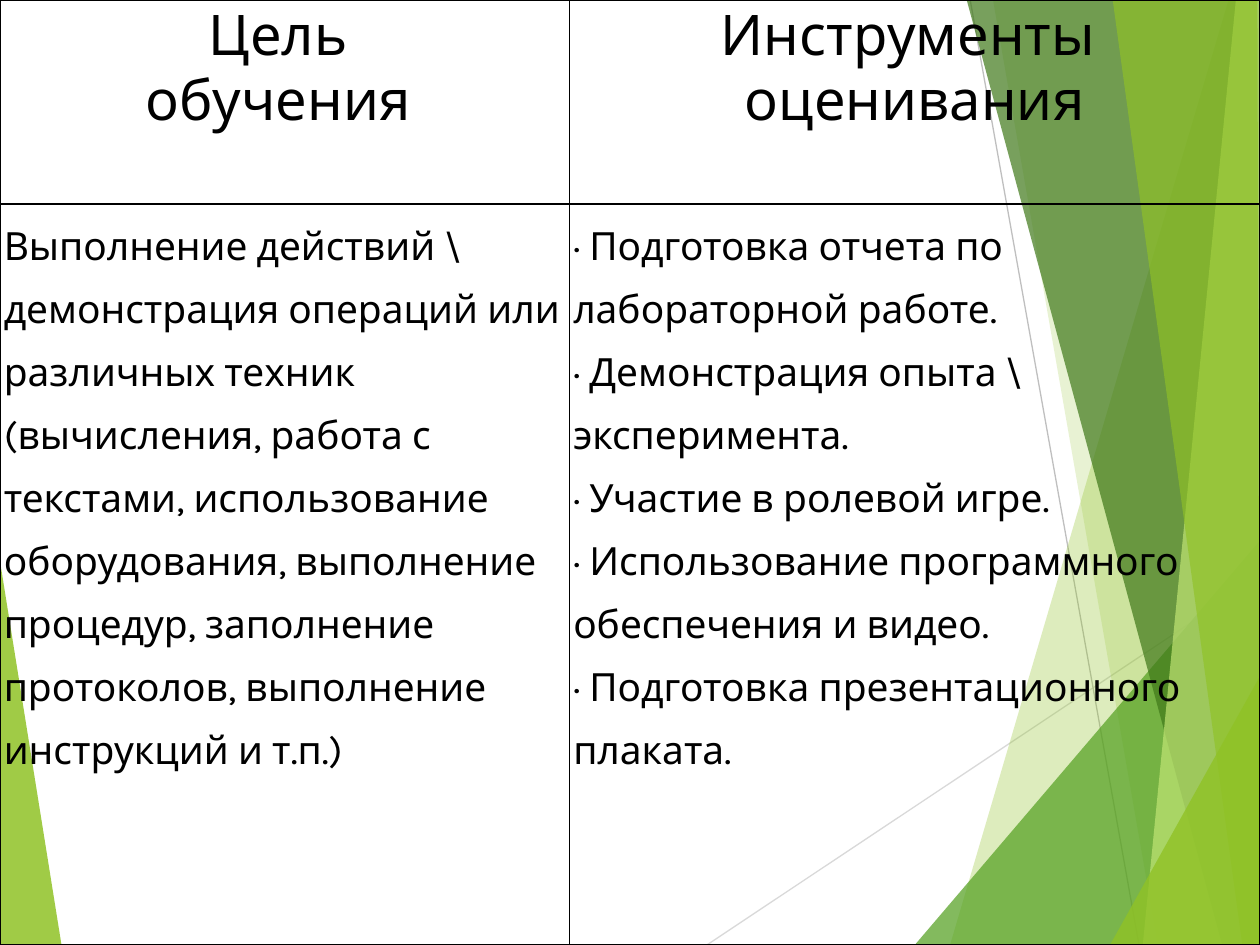
from lxml import etree
from pptx import Presentation
from pptx.dml.color import RGBColor
from pptx.enum.shapes import MSO_CONNECTOR
from pptx.enum.text import PP_ALIGN
from pptx.oxml import parse_xml
from pptx.oxml.ns import nsdecls, qn
from pptx.util import Inches, Pt

FONT = "Karla"
BLACK = RGBColor(0x00, 0x00, 0x00)
LIME = RGBColor(0x90, 0xC2, 0x26)
GREEN = RGBColor(0x54, 0xA0, 0x21)
DARK_GREEN = RGBColor(0x3F, 0x78, 0x19)
PALE_LIME = RGBColor(0xC0, 0xE4, 0x74)
GRAY = RGBColor(0xBF, 0xBF, 0xBF)
LIGHT_GRAY = RGBColor(0xD9, 0xD9, 0xD9)

W, H = 10, 7.5
RAYS = [  # start, end, colour
    ((5.61, H), (10.01, 4.57), LIGHT_GRAY),
    ((7.7, 0), (9.04, H), GRAY),
]
LEFT_FACET = ([(-0.01, 4.39), (0.49, 7.51), (-0.01, H)], LIME, 85)
RIGHT_FACETS = [  # corners, colour, opacity in percent
    ([(9.75, 0), (7.54, H), (10.02, 7.51), (10.01, 0.01)], LIME, 30),
    ([(7.88, -0.01), (9.19, H), (10.01, H), (10.01, -0.01)], LIME, 20),
    ([(7.26, H), (10, 4.29), (10.01, H)], GREEN, 72),
    ([(7.67, -0.01), (9.7, H), (10.01, 7.49), (10.01, -0.01)], DARK_GREEN, 70),
    ([(9.81, -0.01), (9.07, H), (10.01, H), (10, -0.01)], PALE_LIME, 70),
    ([(8.83, -0.01), (9.86, H), (10, H), (9.98, -0.01)], LIME, 65),
    ([(8.81, H), (10.01, 5.35), (10.01, 7.49)], LIME, 80),
]

HEADINGS = [["Цель ", "обучения "], ["Инструменты ", "оценивания"]]
GOAL = [
    "Выполнение действий \\ демонстрация операций или различных техник "
    "(вычисления, работа с текстами, использование оборудования, "
    "выполнение процедур, заполнение протоколов, выполнение инструкций и т.п.)"
]
TOOLS = [
    "· Подготовка отчета по лабораторной работе.",
    "· Демонстрация опыта \\ эксперимента.",
    "· Участие в ролевой игре.",
    "· Использование программного обеспечения и видео.",
    "· Подготовка презентационного плаката.",
]


def add_facet(slide, corners, color, opacity):
    points = [(Inches(x), Inches(y)) for x, y in corners]
    builder = slide.shapes.build_freeform(*points[0], scale=1.0)
    builder.add_line_segments(points[1:], close=True)
    sp = builder.convert_to_shape()
    sp.shadow.inherit = False
    sp.line.fill.background()
    sp.fill.solid()
    sp.fill.fore_color.rgb = color
    clr = sp.fill._xPr.find(qn("a:solidFill"))[0]
    etree.SubElement(clr, qn("a:alpha")).set("val", str(opacity * 1000))


def add_ray(slide, start, end, color):
    ends = [Inches(v) for v in (*start, *end)]
    line = slide.shapes.add_connector(MSO_CONNECTOR.STRAIGHT, *ends)
    line.line.color.rgb = color
    line.line.width = Pt(0.75)
    etree.SubElement(line._element.spPr, qn("a:effectLst"))


def add_backdrop(slide):
    add_facet(slide, *LEFT_FACET)
    for ray in RAYS:
        add_ray(slide, *ray)
    for facet in RIGHT_FACETS:
        add_facet(slide, *facet)


def set_borders(cell):
    tcPr = cell._tc.get_or_add_tcPr()
    for i, side in enumerate(("lnL", "lnR", "lnT", "lnB")):
        tcPr.insert(i, parse_xml(
            f'<a:{side} {nsdecls("a")} w="{Pt(1)}"><a:solidFill>'
            f'<a:srgbClr val="{BLACK}"/></a:solidFill></a:{side}>'))


def fill_cell(cell, lines, size, align, spacing):
    cell.fill.background()
    set_borders(cell)
    cell.margin_left = cell.margin_right = Inches(0.03)
    cell.margin_top = cell.margin_bottom = Inches(0.03)
    tf = cell.text_frame
    tf.text = "\n".join(lines)
    for p in tf.paragraphs:
        p.alignment = align
        p.line_spacing = spacing
        font = p.runs[0].font
        font.name = FONT
        font.size = Pt(size)
        font.color.rgb = BLACK


def add_goal_table(slide, left, top, widths, heights):
    table = slide.shapes.add_table(
        len(heights), len(widths), Inches(left), Inches(top),
        Inches(sum(widths)), Inches(sum(heights))).table
    table.first_row = table.horz_banding = False
    for column, width in zip(table.columns, widths):
        column.width = Inches(width)
    for row, height in zip(table.rows, heights):
        row.height = Inches(height)
    for col, (heading, body) in enumerate(zip(HEADINGS, (GOAL, TOOLS))):
        fill_cell(table.cell(0, col), heading, 32, PP_ALIGN.CENTER, 1.0)
        fill_cell(table.cell(1, col), body, 22.2, PP_ALIGN.LEFT, 1.38)


def main():
    prs = Presentation()
    prs.slide_width, prs.slide_height = Inches(W), Inches(H)
    slide = prs.slides.add_slide(prs.slide_layouts[6])
    add_backdrop(slide)
    add_goal_table(slide, 0, 0, widths=(4.52, 5.48), heights=(1.62, 5.88))
    prs.save("out.pptx")


if __name__ == "__main__":
    main()
